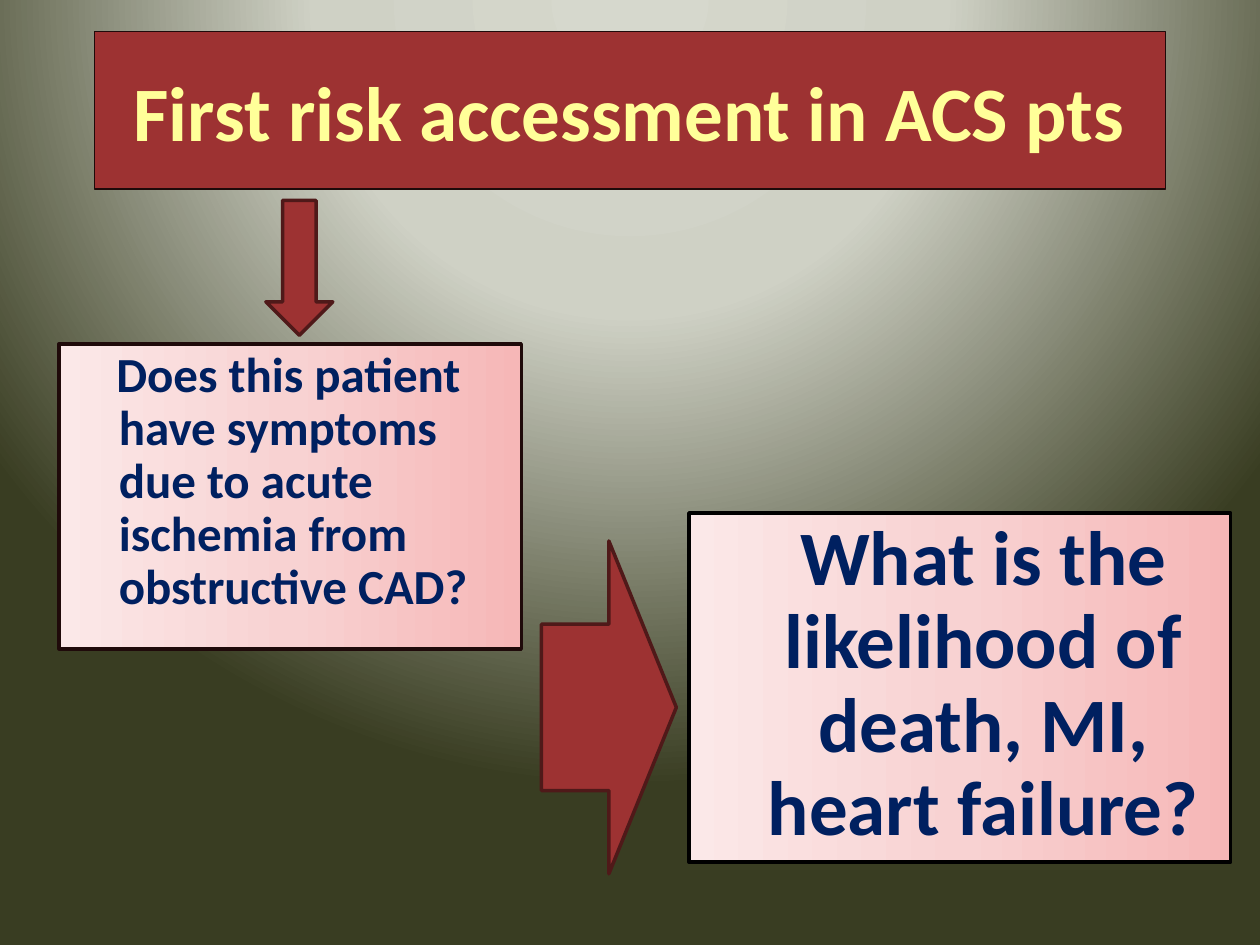
from lxml import etree
from pptx import Presentation
from pptx.dml.color import RGBColor
from pptx.enum.shapes import MSO_SHAPE
from pptx.enum.text import MSO_ANCHOR, MSO_AUTO_SIZE, PP_ALIGN
from pptx.oxml.ns import qn
from pptx.util import Cm, Pt

DOWN_ARROW = MSO_SHAPE.DOWN_ARROW
LEFT, CENTER = PP_ALIGN.LEFT, PP_ALIGN.CENTER
TOP, MIDDLE = MSO_ANCHOR.TOP, MSO_ANCHOR.MIDDLE
NO_AUTOFIT = MSO_AUTO_SIZE.NONE


def color(value):
    return RGBColor.from_string(value)


class SlideBuilder:
    """Holds the style and the current slide, with a method for each kind of element."""

    font = "Calibri"
    red, dark_red, edge = "9D3232", "4F1919", "1F0A0A"
    yellow, navy, black = "FFFF99", "002060", "000000"
    pinks = [(0, "F6B7B7"), (50, "F8D2D2"), (100, "FBE8E8")]
    olives = [(0, "D6D8CD"), (40, "CFD1C5"), (100, "393D22")]

    def __init__(self, presentation):
        layout = presentation.slide_layouts.get_by_name("Two Content")
        self.slide = presentation.slides.add_slide(layout)

    def gradient(self, parent, stops, shade, **settings):
        gradient = etree.Element(qn("a:gradFill"), rotWithShape="1")
        stop_list = etree.SubElement(gradient, qn("a:gsLst"))
        for position, value in stops:
            stop = etree.SubElement(stop_list, qn("a:gs"), pos=str(position * 1000))
            etree.SubElement(stop, qn("a:srgbClr"), val=value)
        shade_element = etree.SubElement(gradient, qn(shade), **settings)
        parent.replace(parent.find(qn("a:solidFill")), gradient)
        return shade_element

    def background(self):
        self.slide.background.fill.solid()
        properties = self.slide.element.find(".//" + qn("p:bgPr"))
        shade = self.gradient(properties, self.olives, "a:path", path="circle")
        etree.SubElement(shade, qn("a:fillToRect"),
                         l="50000", t="-80000", r="50000", b="180000")

    def place(self, shape, left, top, width, height):
        shape.left, shape.top = Cm(left), Cm(top)
        shape.width, shape.height = Cm(width), Cm(height)

    def outline(self, shape, value, width):
        shape.line.color.rgb = color(value)
        shape.line.width = Pt(width)

    def set_text(self, shape, text, size, value, alignment, anchor):
        frame = shape.text_frame
        frame.word_wrap = True
        frame.auto_size = NO_AUTOFIT
        frame.vertical_anchor = anchor
        paragraph = frame.paragraphs[0]
        paragraph.alignment = alignment
        paragraph.space_before = Pt(0)
        run = paragraph.add_run()
        run.text = text
        run.font.name = self.font
        run.font.size = Pt(size)
        run.font.bold = True
        run.font.color.rgb = color(value)
        return paragraph

    def title(self, text, *box):
        shape = self.slide.shapes.title
        self.place(shape, *box)
        shape.fill.solid()
        shape.fill.fore_color.rgb = color(self.red)
        self.outline(shape, self.edge, 0.75)
        self.set_text(shape, text, 44, self.yellow, CENTER, MIDDLE)

    def question(self, index, text, box, size, alignment, edge, indent):
        shape = self.slide.placeholders[index]
        self.place(shape, *box)
        shape.fill.solid()
        self.gradient(shape.element.spPr, self.pinks, "a:lin",
                      ang="10800000", scaled="0")
        self.outline(shape, edge, 2)
        paragraph = self.set_text(shape, text, size, self.navy, alignment, TOP)
        paragraph.line_spacing = 0.9
        properties = paragraph._p.get_or_add_pPr()
        properties.set("marL", str(Cm(0.95)))
        properties.set("indent", str(Cm(indent)))
        etree.SubElement(properties, qn("a:buNone"))

    def arrow(self, left, top, width, height, rotation=0):
        shape = self.slide.shapes.add_shape(
            DOWN_ARROW, Cm(left), Cm(top), Cm(width), Cm(height))
        shape.rotation = rotation
        shape.shadow.inherit = False
        shape.fill.solid()
        shape.fill.fore_color.rgb = color(self.red)
        self.outline(shape, self.dark_red, 2)


def main():
    presentation = Presentation()
    presentation.slide_width, presentation.slide_height = Cm(25.4), Cm(19.05)
    builder = SlideBuilder(presentation)
    builder.background()
    builder.title("First risk accessment in ACS pts", 1.9, 0.64, 21.59, 3.17)
    builder.question(
        1, "Does this patient have symptoms due to acute ischemia from obstructive CAD?",
        (1.19, 6.93, 9.32, 6.15), 28, LEFT, builder.edge, -0.05)
    builder.question(
        2, "What is the likelihood of death, MI, heart failure?",
        (13.89, 10.34, 10.92, 7.04), 44, CENTER, builder.black, 0)
    builder.arrow(5.36, 4.04, 1.35, 2.72)
    builder.arrow(8.92, 12.9, 6.71, 2.72, rotation=270)
    presentation.save("out.pptx")


if __name__ == "__main__":
    main()
